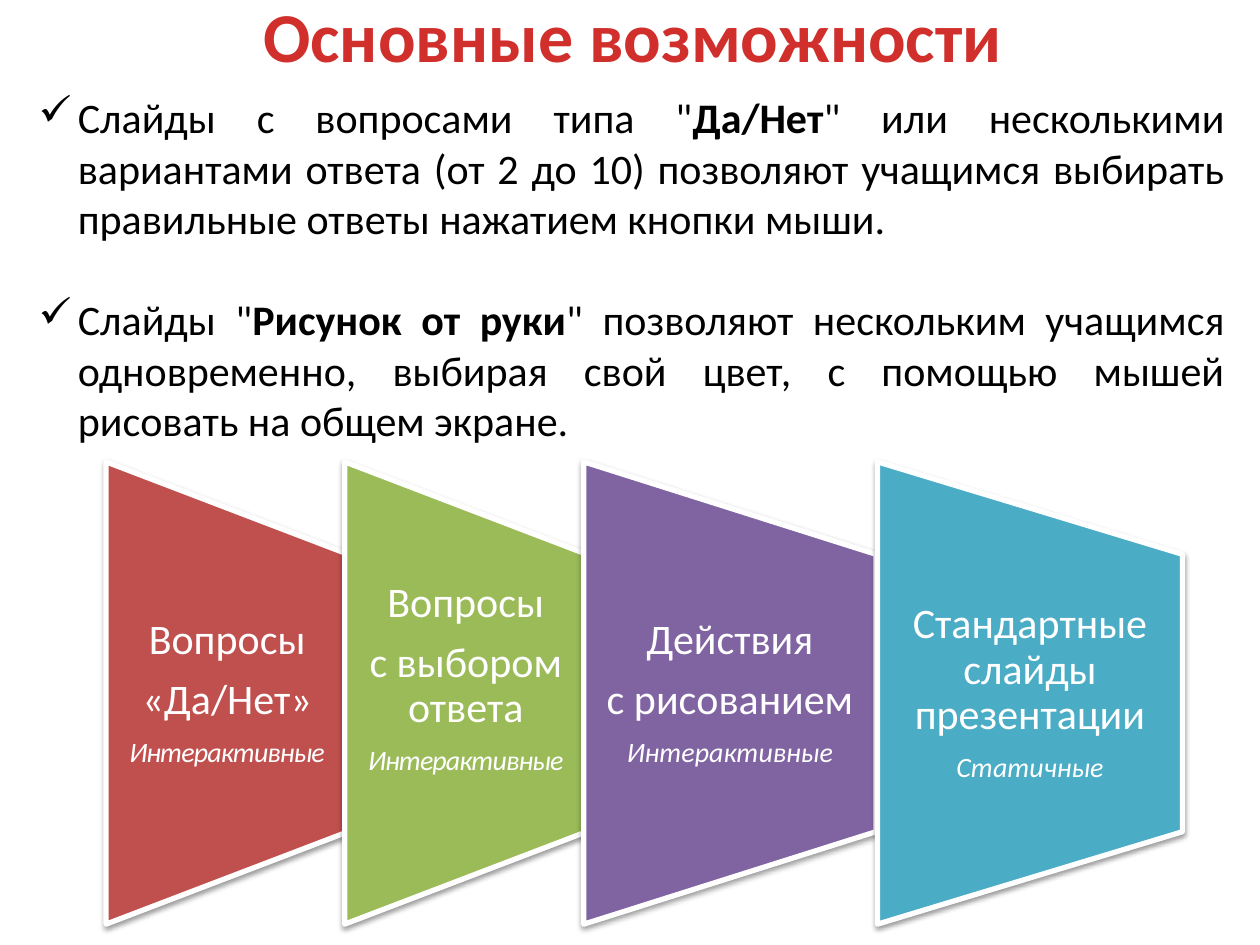
from lxml import etree
from pptx import Presentation
from pptx.dml.color import RGBColor
from pptx.enum.shapes import MSO_SHAPE
from pptx.enum.text import MSO_ANCHOR, PP_ALIGN
from pptx.oxml.ns import qn
from pptx.util import Cm, Pt

TRAPEZOID = MSO_SHAPE.FLOWCHART_MANUAL_OPERATION
MIDDLE = MSO_ANCHOR.MIDDLE
CENTER, JUSTIFY = PP_ALIGN.CENTER, PP_ALIGN.JUSTIFY
FONT = "Calibri"
MID_Y, LONG, BOX_H = 13.97, 9.32, 5.59
SIDE = 0.43
HANG = 0.79

POINTS = [
    ('Слайды с вопросами типа "', "Да/Нет",
     '" или несколькими вариантами ответа (от 2 до 10) позволяют '
     "учащимся выбирать правильные ответы нажатием кнопки мыши."),
    ('Слайды "', "Рисунок от руки",
     '" позволяют нескольким учащимся одновременно, выбирая свой цвет, '
     "с помощью мышей рисовать на общем экране."),
]

# left, width, fill, heading lines, note, note spacing (pt), bottom inset
CARDS = [
    (2.14, 4.88, "C0504D", ["Вопросы", "«Да/Нет»"], "Интерактивные", -0.5, 0),
    (6.95, 4.88, "9BBB59", ["Вопросы", "с выбором ответа"],
     "Интерактивные", -0.5, 0.56),
    (11.77, 5.89, "8064A2", ["Действия", "с рисованием"],
     "Интерактивные", 0, 0),
    (17.69, 6.15, "4BACC6", ["Стандартные слайды презентации"],
     "Статичные", 0, 0),
]


def color(code):
    return RGBColor.from_string(code)


def assign(target, values):
    for name, value in values.items():
        setattr(target, name, value)


def add_box(shapes, left, top, width, height, **frame):
    box = shapes.add_textbox(Cm(left), Cm(top), Cm(width), Cm(height))
    assign(box.text_frame, {"word_wrap": True, **frame})
    return box.text_frame


def add_line(frame, first, **layout):
    """Return the first paragraph, or a new one after it, with its layout."""
    line = frame.paragraphs[0] if first else frame.add_paragraph()
    assign(line, layout)
    return line


def add_run(line, text, size, code, **style):
    run = line.add_run()
    run.text = text
    assign(run.font, {"name": FONT, "size": Pt(size), **style})
    run.font.color.rgb = color(code)
    return run


def add_check(line):
    """Hang the paragraph from a check mark."""
    props = line._p.get_or_add_pPr()
    props.set("marL", str(Cm(HANG)))
    props.set("indent", str(-Cm(HANG)))
    etree.SubElement(props, qn("a:buChar"), char="✓")


def add_shadow(shape):
    shape.shadow.inherit = False
    effects = shape._element.spPr.find(qn("a:effectLst"))
    outer = etree.SubElement(
        effects, qn("a:outerShdw"), blurRad=str(Pt(3.1)),
        dist=str(Pt(1.6)), dir="5400000", rotWithShape="0")
    shade = etree.SubElement(outer, qn("a:srgbClr"), val="000000")
    etree.SubElement(shade, qn("a:alpha"), val="38000")


def add_title(slide):
    frame = add_box(slide.shapes, 4.98, -0.28, 15.54, 1.96, word_wrap=False)
    line = add_line(frame, True, alignment=CENTER)
    add_run(line, "Основные возможности", 40, "D02F2C", bold=True)


def add_points(slide):
    frame = add_box(slide.shapes, 0.53, 1.73, 24.41, 7.44)
    for index, parts in enumerate(POINTS):
        gap = Pt(0 if index == 0 else 29)
        line = add_line(frame, index == 0, alignment=JUSTIFY,
                        space_before=gap)
        add_check(line)
        for place, text in enumerate(parts):
            add_run(line, text, 24, "000000", bold=place == 1)


def add_card(slide, left, width, fill, heads, note, tight, lift):
    shapes = slide.shapes.add_group_shape().shapes
    mid = left + width / 2
    panel = shapes.add_shape(TRAPEZOID, Cm(mid - LONG / 2),
                             Cm(MID_Y - width / 2), Cm(LONG), Cm(width))
    panel.rotation = 270
    panel.fill.solid()
    panel.fill.fore_color.rgb = color(fill)
    panel.line.color.rgb = color("FFFFFF")
    panel.line.width = Pt(3)
    add_shadow(panel)

    frame = add_box(shapes, left, MID_Y - BOX_H / 2, width, BOX_H,
                    vertical_anchor=MIDDLE, margin_left=Cm(SIDE),
                    margin_right=Cm(SIDE), margin_top=0,
                    margin_bottom=Cm(lift))
    layout = {"alignment": CENTER, "line_spacing": 0.9}
    for index, text in enumerate(heads):
        line = add_line(frame, index == 0, space_after=Pt(8.4), **layout)
        add_run(line, text, 24, "FFFFFF")
    line = add_line(frame, False, space_after=Pt(5.6), **layout)
    run = add_run(line, note, 16, "FFFFFF", italic=True)
    if tight:
        run._r.get_or_add_rPr().set("spc", str(int(tight * 100)))


def main():
    deck = Presentation()
    assign(deck, {"slide_width": Cm(25.4), "slide_height": Cm(19.05)})
    slide = deck.slides.add_slide(deck.slide_layouts[6])
    add_points(slide)
    add_title(slide)
    for card in CARDS:
        add_card(slide, *card)
    deck.save("out.pptx")


if __name__ == "__main__":
    main()
